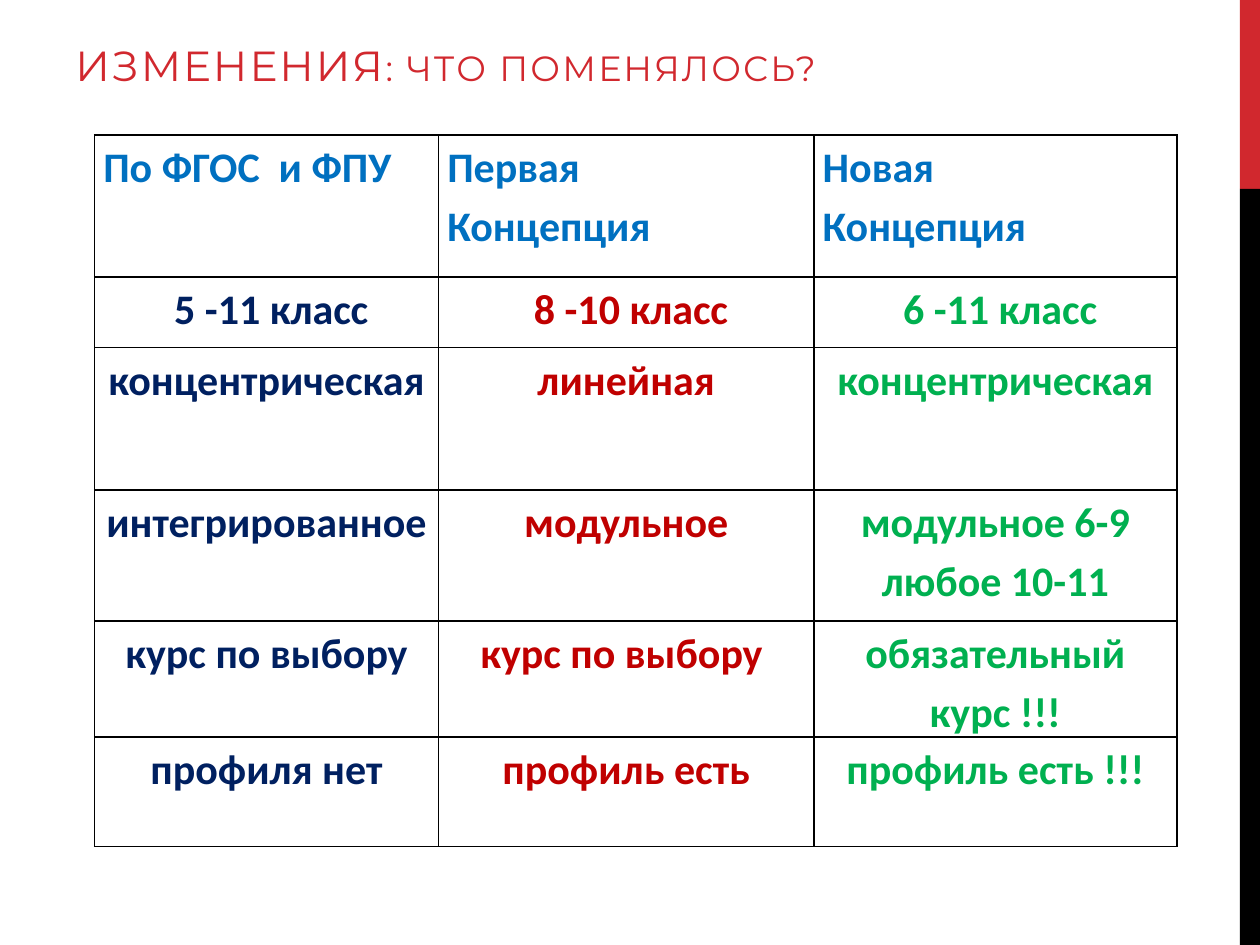
from lxml.etree import SubElement
from pptx import Presentation
from pptx.dml.color import RGBColor
from pptx.enum.shapes import MSO_SHAPE
from pptx.enum.text import MSO_ANCHOR, PP_ALIGN
from pptx.oxml.ns import qn
from pptx.util import Inches, Pt

RED = RGBColor(0xD1, 0x28, 0x2E)
BLACK = RGBColor(0, 0, 0)
BLUE = RGBColor(0x00, 0x70, 0xC0)
NAVY = RGBColor(0x00, 0x20, 0x60)
CRIMSON = RGBColor(0xC0, 0x00, 0x00)
GREEN = RGBColor(0x00, 0xB0, 0x50)


def add_run(p, text, color, **font):
    r = p.add_run()
    r.text = text
    r.font.color.rgb = color
    for name, value in font.items():
        setattr(r.font, name, value)
    return r


def add_borders(cell):
    tc_pr = cell._tc.get_or_add_tcPr()
    for side in ("lnL", "lnR", "lnT", "lnB"):
        ln = SubElement(tc_pr, qn(f"a:{side}"), w=str(Pt(1)))
        fill = SubElement(ln, qn("a:solidFill"))
        SubElement(fill, qn("a:srgbClr"), val=str(BLACK))


prs = Presentation()
prs.slide_width, prs.slide_height = Inches(10), Inches(7.5)
s = prs.slides.add_slide(prs.slide_layouts[6])

# Side stripe
for top, height, color in ((0, 1.5, RED), (1.5, 6, BLACK)):
    sp = s.shapes.add_shape(MSO_SHAPE.RECTANGLE, Inches(9.84), Inches(top),
                            Inches(0.16), Inches(height))
    sp.shadow.inherit = False
    sp.fill.solid()
    sp.fill.fore_color.rgb = color
    sp.line.fill.background()

# Title
tf = s.shapes.add_textbox(Inches(0.5), Inches(0.25), Inches(6.7), Inches(0.51)).text_frame
tf.word_wrap = True
tf.vertical_anchor = MSO_ANCHOR.BOTTOM
p = tf.paragraphs[0]
p.space_after = Pt(6)
for text, size in (("ИЗМЕНЕНИЯ", 24), (": ЧТО ПОМЕНЯЛОСЬ?", 20)):
    r = add_run(p, text, RED, name="Montserrat", size=Pt(size))
    r.font._element.set("spc", "120")

# Comparison table
ROWS = [
    ("По ФГОС  и ФПУ", "Первая\nКонцепция", "Новая\nКонцепция"),
    (" 5 -11 класс", " 8 -10 класс", " 6 -11 класс"),
    ("концентрическая", "линейная", "концентрическая"),
    ("интегрированное", "модульное", "модульное 6-9\nлюбое 10-11"),
    ("курс по выбору", "курс по выбору ", "обязательный курс !!!"),
    ("профиля нет", "профиль есть", "профиль есть !!!"),
]
COL_WIDTHS = (2.73, 2.98, 2.88)
ROW_HEIGHTS = (1.13, 0.56, 1.13, 1.04, 0.87, 0.87)
COL_COLORS = (NAVY, CRIMSON, GREEN)
CELL_FORMAT = {"margin_left": Inches(0.07), "margin_right": Inches(0.07),
               "margin_top": 0, "margin_bottom": 0}

table = s.shapes.add_table(len(ROWS), len(COL_WIDTHS), Inches(0.75), Inches(1.07),
                           Inches(sum(COL_WIDTHS)), Inches(sum(ROW_HEIGHTS))).table
for column, width in zip(table.columns, COL_WIDTHS):
    column.width = Inches(width)
for i, (texts, height) in enumerate(zip(ROWS, ROW_HEIGHTS)):
    table.rows[i].height = Inches(height)
    for j, text in enumerate(texts):
        cell = table.cell(i, j)
        for name, value in CELL_FORMAT.items():
            setattr(cell, name, value)
        add_borders(cell)
        cell.fill.background()
        tf = cell.text_frame
        for k, line in enumerate(text.split("\n")):
            p = tf.add_paragraph() if k else tf.paragraphs[0]
            p.line_spacing = 1.15
            p.alignment = PP_ALIGN.CENTER if i else PP_ALIGN.LEFT
            add_run(p, line, COL_COLORS[j] if i else BLUE,
                    name="Calibri", size=Pt(24), bold=True)

prs.save("out.pptx")
